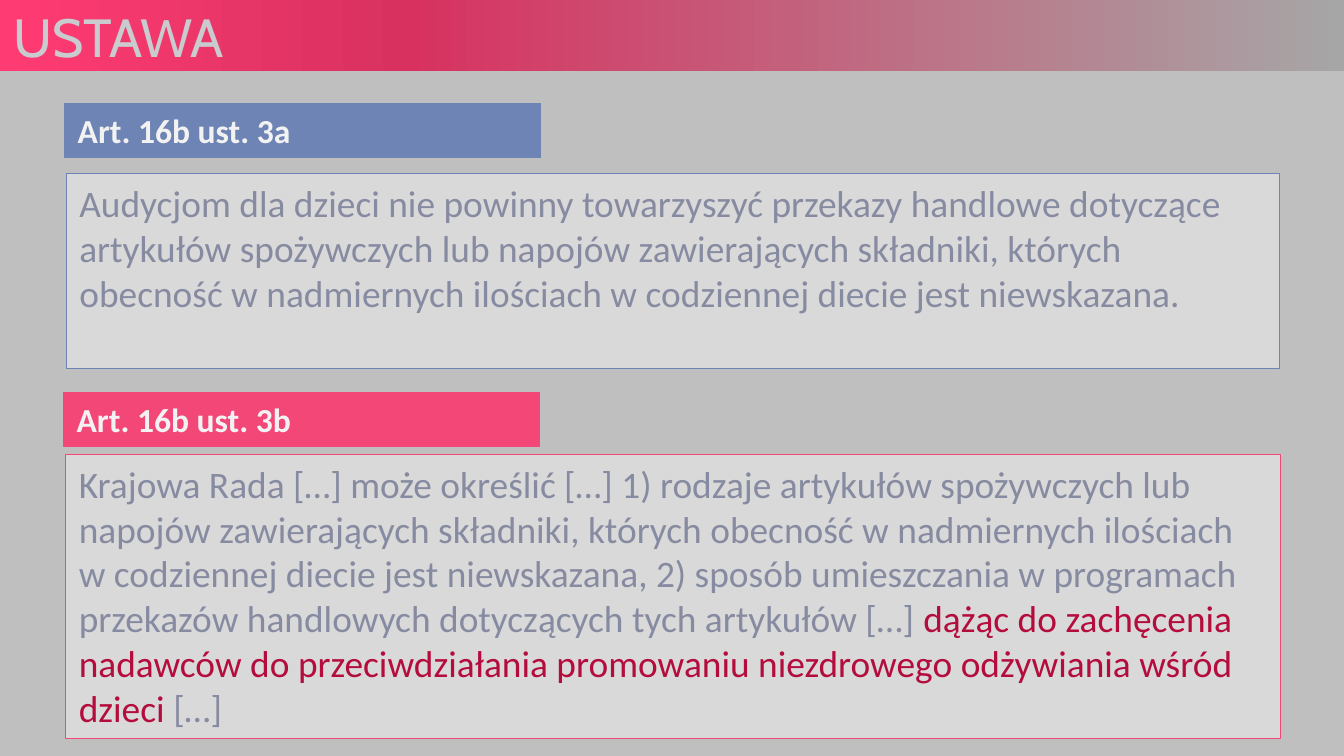
from copy import deepcopy
from dataclasses import dataclass

from pptx import Presentation
from pptx.dml.color import RGBColor
from pptx.enum.shapes import MSO_SHAPE
from pptx.enum.text import MSO_ANCHOR, PP_ALIGN
from pptx.oxml.ns import qn
from pptx.util import Cm, Pt

RECTANGLE = MSO_SHAPE.RECTANGLE
TOP, MIDDLE = MSO_ANCHOR.TOP, MSO_ANCHOR.MIDDLE
LEFT = PP_ALIGN.LEFT


@dataclass(frozen=True)
class Theme:
    background: str = "BFBFBF"
    banner: tuple = ((0, "A6A6A6"), (0.7, "D83160"), (1, "FF3B73"))
    title: str = "C9CBCE"
    panel: str = "D9D9D9"
    blue: str = "6E84B4"
    pink: str = "F34778"
    label: str = "F2F2F2"
    body: str = "878BA1"
    emphasis: str = "B40C3C"
    title_font: str = "Cabin"
    text_font: str = "Calibri"
    title_size: float = 28.8
    label_size: float = 18
    body_size: float = 20
    border: float = 0.5


theme = Theme()


def add_box(left, top, width, height, fill=None, line=None):
    box = slide.shapes.add_shape(RECTANGLE, Cm(left), Cm(top), Cm(width), Cm(height))
    box.shadow.inherit = False
    if fill:
        box.fill.solid()
        box.fill.fore_color.rgb = RGBColor.from_string(fill)
    if line:
        box.line.color.rgb = RGBColor.from_string(line)
        box.line.width = Pt(theme.border)
    else:
        box.line.fill.background()
    return box


def write(box, text, color, size, font=theme.text_font, bold=False, anchor=TOP):
    """Append one run of text to the first paragraph of a box."""
    frame = box.text_frame
    frame.word_wrap = True
    frame.vertical_anchor = anchor
    paragraph = frame.paragraphs[0]
    paragraph.alignment = LEFT
    run = paragraph.add_run()
    run.text = text
    run.font.name = font
    run.font.size = Pt(size)
    run.font.bold = bold
    run.font.color.rgb = RGBColor.from_string(color)


prs = Presentation()
prs.slide_width, prs.slide_height = Cm(25.4), Cm(14.29)
slide = prs.slides.add_slide(prs.slide_layouts[6])
slide.background.fill.solid()
slide.background.fill.fore_color.rgb = RGBColor.from_string(theme.background)

# Title banner with a three-stop gradient
banner = add_box(0, 0, 25.4, 1.35)
banner.fill.gradient()
banner.fill.gradient_angle = 180
stop_list = banner.fill._xPr.find(qn("a:gradFill")).find(qn("a:gsLst"))
stop_list.append(deepcopy(stop_list[0]))
for stop, (position, color) in zip(banner.fill.gradient_stops, theme.banner):
    stop.position = position
    stop.color.rgb = RGBColor.from_string(color)
write(banner, "USTAWA", theme.title, theme.title_size, font=theme.title_font, anchor=MIDDLE)

# Articles: label, accent, label place, panel place, passages
articles = [
    ("Art. 16b ust. 3a", theme.blue, (1.22, 1.95), (1.25, 3.28, 22.94, 3.68), [
        ("Audycjom dla dzieci nie powinny towarzyszyć przekazy handlowe dotyczące "
         "artykułów spożywczych lub napojów zawierających składniki, których "
         "obecność w nadmiernych ilościach w codziennej diecie jest niewskazana.", theme.body),
    ]),
    ("Art. 16b ust. 3b", theme.pink, (1.2, 7.42), (1.24, 8.59, 22.96, 5.38), [
        ("Krajowa Rada […] może określić […] 1) rodzaje artykułów spożywczych lub "
         "napojów zawierających składniki, których obecność w nadmiernych ilościach "
         "w codziennej diecie jest niewskazana, 2) sposób umieszczania w programach "
         "przekazów handlowych dotyczących tych artykułów […] ", theme.body),
        ("dążąc do zachęcenia nadawców do przeciwdziałania promowaniu niezdrowego "
         "odżywiania wśród dzieci ", theme.emphasis),
        ("[…]", theme.body),
    ]),
]

for label, accent, label_place, panel_place, passages in articles:
    panel = add_box(*panel_place, fill=theme.panel, line=accent)
    for passage, color in passages:
        write(panel, passage, color, theme.body_size)
    heading = add_box(*label_place, 9, 1.02, fill=accent, line=accent)
    write(heading, label, theme.label, theme.label_size, bold=True)

prs.save("out.pptx")
